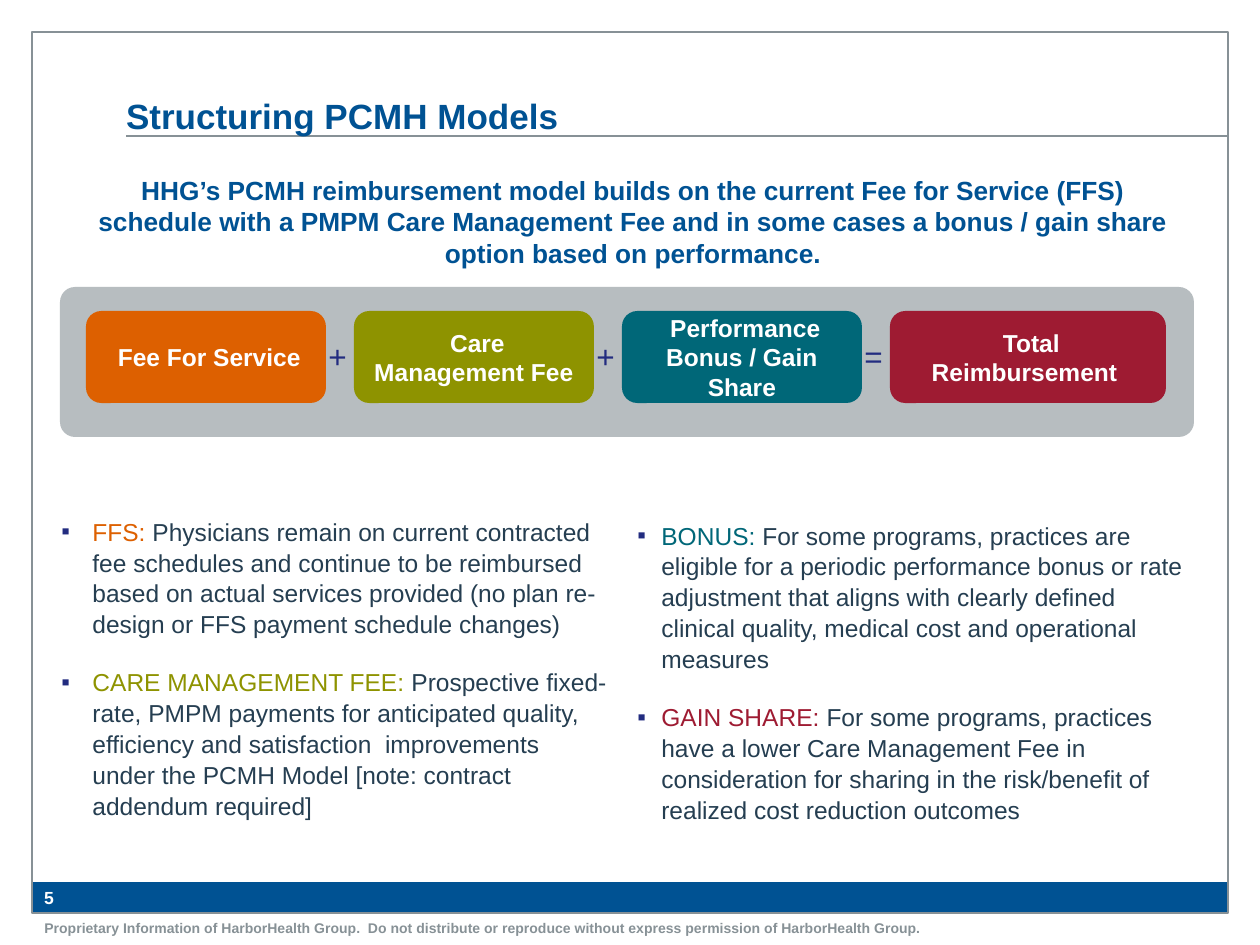
import pptx
import pptx.util
import pptx.dml.color
import pptx.enum.shapes
import pptx.enum.text
import pptx.oxml
import pptx.oxml.ns

Pt = pptx.util.Pt
Kind = pptx.enum.shapes.MSO_SHAPE
Align = pptx.enum.text.PP_ALIGN
Anchor = pptx.enum.text.MSO_ANCHOR

FONT = "Arial"
HUES = {
    "blue": "005293", "gray": "879196", "white": "FFFFFF", "navy": "222C80",
    "ink": "253E51", "orange": "DD6000", "olive": "8E9300",
    "teal": "006778", "red": "9E1B32",
}

TITLE = "Structuring PCMH Models"
LEAD = ("HHG’s PCMH reimbursement model builds on the current Fee for Service (FFS) "
        "schedule with a PMPM Care Management Fee and in some cases a bonus / gain share "
        "option based on performance.")
PAGE = "5"
NOTICE = ("Proprietary Information of HarborHealth Group.  Do not distribute or reproduce "
          "without express permission of HarborHealth Group.")

# label, hue, width, sign before it
TERMS = [
    (" Fee For Service", "orange", 240, None),
    (" Care Management Fee", "olive", 240, "+"),
    (" Performance Bonus / Gain Share", "teal", 240, "+"),
    (" Total Reimbursement ", "red", 276, "="),
]

# box, indent, items of (head, hue, body)
COLUMNS = [
    ((49, 509, 571, 319), 31, [
        ("FFS: ", "orange",
         "Physicians remain on current contracted fee schedules and continue to be "
         "reimbursed based on actual services provided (no plan re-design or FFS "
         "payment schedule changes)"),
        ("CARE MANAGEMENT FEE: ", "olive",
         "Prospective fixed-rate, PMPM payments for anticipated quality, efficiency and "
         "satisfaction  improvements under the PCMH Model [note: contract addendum "
         "required]"),
    ]),
    ((625, 513, 577, 319), 24, [
        ("BONUS:", "teal",
         " For some programs, practices are eligible for a periodic performance bonus or "
         "rate adjustment that aligns with clearly defined clinical quality, medical cost "
         "and operational measures"),
        ("GAIN SHARE: ", "red",
         "For some programs, practices have a lower Care Management Fee in consideration "
         "for sharing in the risk/benefit of realized cost reduction outcomes"),
    ]),
]


def px(n):
    return round(n * 914400 / 126)


def rgb(hue):
    return pptx.dml.color.RGBColor.from_string(HUES[hue])


def add_run(para, text, size, hue, bold=False):
    run = para.add_run()
    run.text = text
    font = run.font
    font.name, font.size, font.bold = FONT, Pt(size), bold
    font.color.rgb = rgb(hue)


def add_form(slide, kind, box, fill=None, line=None):
    form = slide.shapes.add_shape(kind, *map(px, box))
    form.shadow.inherit = False
    if fill:
        form.fill.solid()
        form.fill.fore_color.rgb = rgb(fill)
    else:
        form.fill.background()
    if line:
        form.line.color.rgb = rgb(line)
        form.line.width = Pt(1)
    else:
        form.line.fill.background()
    return form


def add_box(slide, box, inset=None, anchor=Anchor.TOP):
    """Add a wrapping text box; inset is left, top, right, bottom in px."""
    frame = slide.shapes.add_textbox(*map(px, box)).text_frame
    frame.word_wrap = True
    frame.vertical_anchor = anchor
    if inset:
        (frame.margin_left, frame.margin_top,
         frame.margin_right, frame.margin_bottom) = map(px, inset)
    return frame


def add_mark(para, indent):
    """Give the paragraph a square bullet with a hanging indent."""
    props = para._p.get_or_add_pPr()
    props.set("marL", str(px(indent)))
    props.set("indent", str(-px(indent)))
    space = pptx.oxml.ns.nsdecls("a")
    for part in (f'<a:buClr {space}><a:srgbClr val="{HUES["navy"]}"/></a:buClr>',
                 f'<a:buFont {space} typeface="{FONT}"/>',
                 f'<a:buChar {space} char="▪"/>'):
        props.append(pptx.oxml.parse_xml(part))


def add_base(slide):
    add_form(slide, Kind.RECTANGLE, (32, 882, 1196, 31), fill="blue")
    add_form(slide, Kind.RECTANGLE, (32, 32, 1196, 881), line="gray")
    rule = slide.shapes.add_connector(
        pptx.enum.shapes.MSO_CONNECTOR.STRAIGHT, px(1228), px(136), px(126), px(136))
    rule.line.color.rgb = rgb("gray")
    rule.line.width = Pt(0.75)
    rule._element.spPr.append(pptx.oxml.parse_xml(
        f'<a:effectLst {pptx.oxml.ns.nsdecls("a")}/>'))

    frame = add_box(slide, (32, 882, 84, 31), (12, 0, 0, 0), Anchor.MIDDLE)
    add_run(frame.paragraphs[0], PAGE, 10, "white", True)
    frame = add_box(slide, (32, 913, 1196, 32))
    add_run(frame.paragraphs[0], NOTICE, 8, "gray", True)


def add_heads(slide):
    frame = add_box(slide, (126, 32, 765, 104), (0, 0, 0, 0), Anchor.BOTTOM)
    add_run(frame.paragraphs[0], TITLE, 20, "blue", True)
    frame = add_box(slide, (92, 174, 1082, 71), (0, 0, 0, 0))
    frame.paragraphs[0].alignment = Align.CENTER
    add_run(frame.paragraphs[0], LEAD, 15, "blue", True)


def add_sum(slide):
    panel = add_form(slide, Kind.ROUNDED_RECTANGLE, (60, 287, 1134, 150), fill="gray")
    panel.adjustments[0] = 0.1
    tint = panel._element.spPr.find(".//" + pptx.oxml.ns.qn("a:srgbClr"))
    tint.append(pptx.oxml.parse_xml(
        f'<a:alpha {pptx.oxml.ns.nsdecls("a")} val="60000"/>'))

    for i, (label, hue, width, sign) in enumerate(TERMS):
        left = 86 + 268 * i
        pill = add_form(slide, Kind.ROUNDED_RECTANGLE, (left, 311, width, 92), fill=hue)
        frame = pill.text_frame
        frame.word_wrap = True
        frame.vertical_anchor = Anchor.MIDDLE
        frame.paragraphs[0].alignment = Align.CENTER
        add_run(frame.paragraphs[0], label, 14, "white", True)
        if sign:
            frame = add_box(slide, (left - 38, 331, 49, 50))
            add_run(frame.paragraphs[0], sign, 18, "navy")


def add_columns(slide):
    for box, indent, items in COLUMNS:
        frame = add_box(slide, box)
        for i, (head, hue, body) in enumerate(items):
            para = frame.add_paragraph() if i else frame.paragraphs[0]
            add_mark(para, indent)
            para.line_spacing = 1.05
            para.space_before = Pt(3.5 if i else 0)
            para.space_after = Pt(12)
            add_run(para, head, 14, hue)
            add_run(para, body, 14, "ink")


def main():
    deck = pptx.Presentation()
    deck.slide_width, deck.slide_height = px(1260), px(945)
    slide = deck.slides.add_slide(deck.slide_layouts[6])
    add_base(slide)
    add_heads(slide)
    add_columns(slide)
    add_sum(slide)
    deck.save("out.pptx")


if __name__ == "__main__":
    main()
